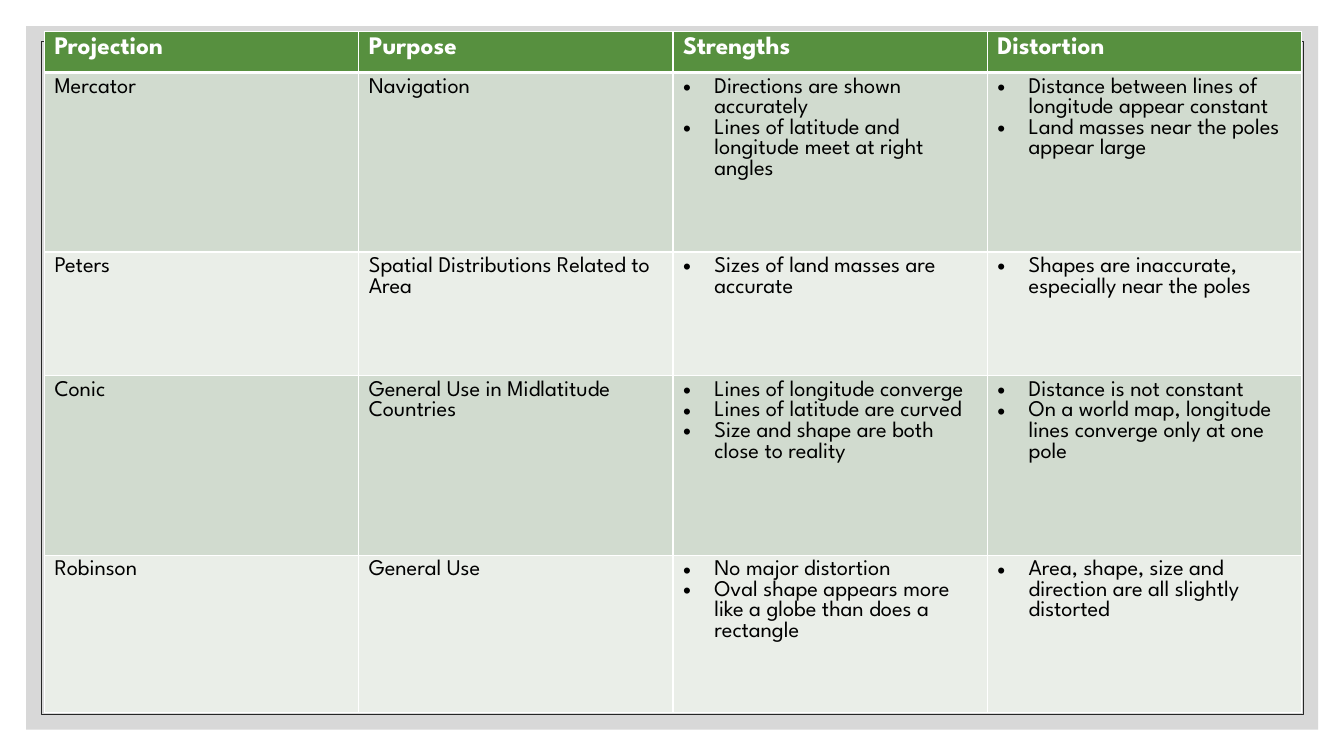
from lxml import etree
from pptx import Presentation
from pptx.dml.color import RGBColor
from pptx.enum.shapes import MSO_SHAPE
from pptx.oxml.ns import qn
from pptx.util import Cm, Pt

RECTANGLE = MSO_SHAPE.RECTANGLE
WHITE = RGBColor(0xFF, 0xFF, 0xFF)
BLACK = RGBColor(0x00, 0x00, 0x00)
GREY = RGBColor(0xBF, 0xBF, 0xBF)
CHARCOAL = RGBColor(0x26, 0x26, 0x26)
GREEN = RGBColor(0x57, 0x90, 0x3F)
SAGE = RGBColor(0xD1, 0xDB, 0xCF)
PALE_SAGE = RGBColor(0xEA, 0xEE, 0xE8)

HEADINGS = ["Projection", "Purpose", "Strengths", "Distortion"]
PROJECTIONS = [
    ("Mercator", "Navigation",
     ["Directions are shown accurately",
      "Lines of latitude and longitude meet at right angles"],
     ["Distance between lines of longitude appear constant",
      "Land masses near the poles appear large"]),
    ("Peters", "Spatial Distributions Related to Area",
     ["Sizes of land masses are accurate"],
     ["Shapes are inaccurate, especially near the poles"]),
    ("Conic", "General Use in Midlatitude Countries",
     ["Lines of longitude converge",
      "Lines of latitude are curved",
      "Size and shape are both close to reality"],
     ["Distance is not constant",
      "On a world map, longitude lines converge only at one pole"]),
    ("Robinson", "General Use",
     ["No major distortion",
      "Oval shape appears more like a globe than does a rectangle"],
     ["Area, shape, size and direction are all slightly distorted"]),
]
COLUMN_WIDTH = 7.92
ROW_HEIGHTS = [1.04, 4.52, 3.12, 4.52, 3.96]


def write(paragraph, text, font="League Spartan", size=16, color=BLACK, bold=False, bullet=False):
    run = paragraph.add_run()
    run.text = text
    run.font.name = font
    run.font.size = Pt(size)
    run.font.bold = bold
    run.font.color.rgb = color
    if bullet:
        properties = paragraph._p.get_or_add_pPr()
        properties.set("marL", str(Cm(0.79)))
        properties.set("indent", str(-Cm(0.79)))
        etree.SubElement(properties, qn("a:buFont"), typeface="Arial")
        etree.SubElement(properties, qn("a:buChar"), char="•")


class SlideBuilder:
    def __init__(self, slide, border=WHITE):
        self.slide = slide
        self.border = border

    def rectangle(self, left, top, width, height, fill=None, opacity=100, line=None):
        panel = self.slide.shapes.add_shape(RECTANGLE, Cm(left), Cm(top), Cm(width), Cm(height))
        panel.shadow.inherit = False
        if fill is None:
            panel.fill.background()
        else:
            panel.fill.solid()
            panel.fill.fore_color.rgb = fill
            color = panel.fill._xPr.find(qn("a:solidFill"))[0]
            etree.SubElement(color, qn("a:alpha"), val=str(opacity * 1000))
        if line is None:
            panel.line.fill.background()
        else:
            panel.line.color.rgb = line
            panel.line.width = Pt(0.5)

    def borders(self, cell, top, bottom):
        properties = cell._tc.get_or_add_tcPr()
        for side, width in (("L", 1), ("R", 1), ("T", top), ("B", bottom)):
            edge = etree.SubElement(properties, qn(f"a:ln{side}"), w=str(Pt(width)))
            fill = etree.SubElement(edge, qn("a:solidFill"))
            etree.SubElement(fill, qn("a:srgbClr"), val=str(self.border))

    def cell(self, cell, content, fill, top=1, bottom=1, **style):
        self.borders(cell, top, bottom)
        cell.fill.solid()
        cell.fill.fore_color.rgb = fill
        bullet = isinstance(content, list)
        frame = cell.text_frame
        for index, text in enumerate(content if bullet else [content]):
            paragraph = frame.add_paragraph() if index else frame.paragraphs[0]
            write(paragraph, text, bullet=bullet, **style)

    def table(self, left, top, headings, records, column_width, row_heights):
        table = self.slide.shapes.add_table(
            len(row_heights), len(headings), Cm(left), Cm(top),
            Cm(column_width * len(headings)), Cm(sum(row_heights))).table
        for column in table.columns:
            column.width = Cm(column_width)
        for row, height in zip(table.rows, row_heights):
            row.height = Cm(height)
        for column, heading in enumerate(headings):
            self.cell(table.cell(0, column), heading, GREEN, bottom=3,
                      size=18, color=WHITE, bold=True)
        for row, record in enumerate(records, 1):
            for column, content in enumerate(record):
                self.cell(table.cell(row, column), content,
                          SAGE if row % 2 else PALE_SAGE, top=3 if row == 1 else 1)


def main():
    presentation = Presentation()
    presentation.slide_width = Cm(33.87)
    presentation.slide_height = Cm(19.05)
    builder = SlideBuilder(presentation.slides.add_slide(presentation.slide_layouts[6]))
    builder.rectangle(0.66, 0.66, 32.56, 17.73, fill=GREY, opacity=60)
    builder.rectangle(1.04, 1.04, 31.8, 16.97, line=CHARCOAL)
    builder.table(1.12, 0.79, HEADINGS, PROJECTIONS, COLUMN_WIDTH, ROW_HEIGHTS)
    presentation.save("out.pptx")


if __name__ == "__main__":
    main()
